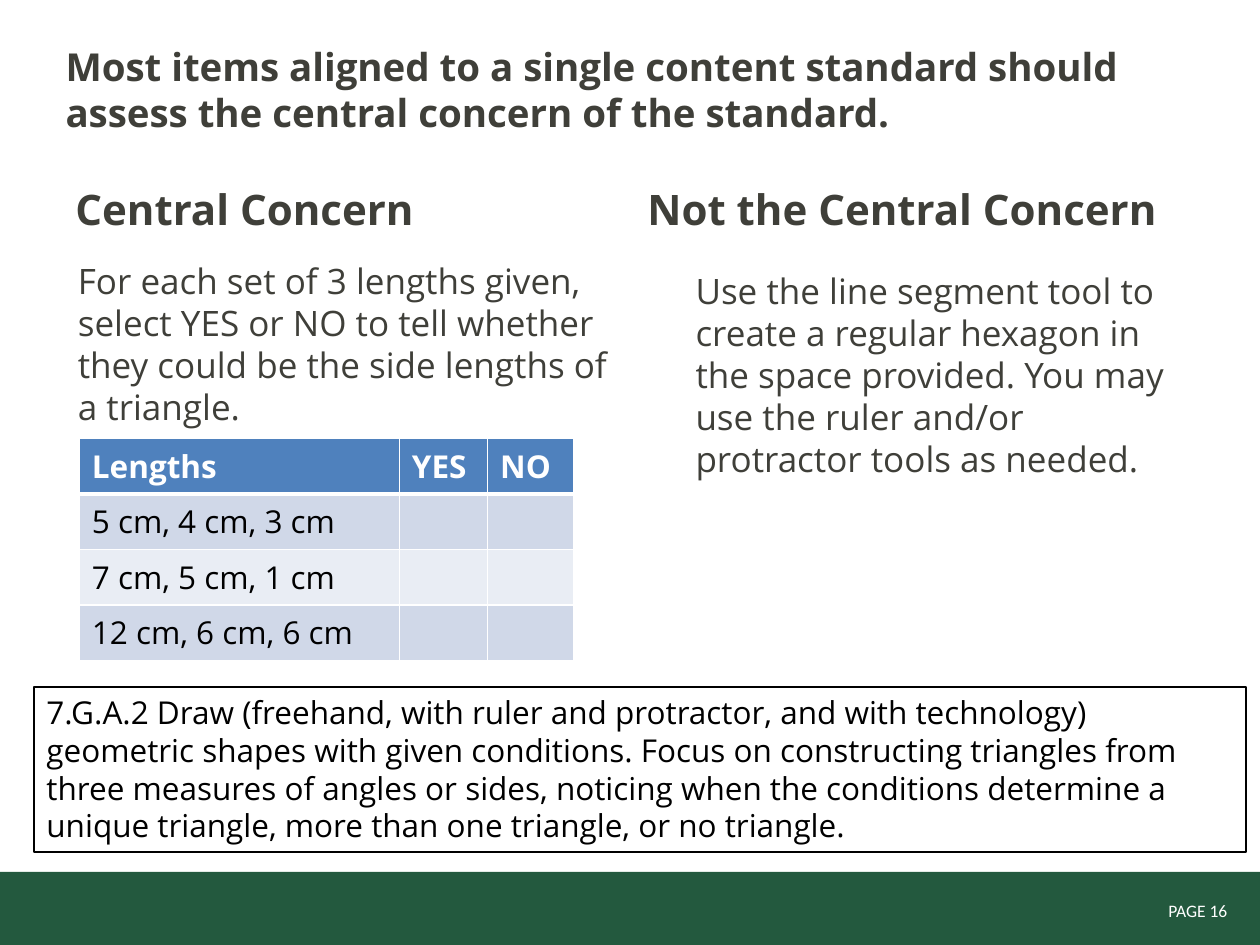
from lxml.etree import SubElement
from pptx import Presentation
from pptx.dml.color import RGBColor
from pptx.enum.shapes import MSO_SHAPE as Preset
from pptx.enum.text import MSO_ANCHOR as Anchor, MSO_AUTO_SIZE as AutoSize, PP_ALIGN as Align
from pptx.oxml.ns import qn
from pptx.util import Inches, Pt

# Content
TITLE = ("Most items aligned to a single content standard should "
         "assess the central concern of the standard.")
LEFT_HEADING = "Central Concern"
LEFT_TASK = ("For each set of 3 lengths given, select YES or NO to tell whether "
             "they could be the side lengths of a triangle.")
RIGHT_HEADING = "Not the Central Concern"
RIGHT_TASK = ("Use the line segment tool to create a regular hexagon in the space "
              "provided. You may use the ruler and/or protractor tools as needed.")
TABLE_ROWS = [
    ("Lengths", "YES", "NO"),
    ("5 cm, 4 cm, 3 cm", "", ""),
    ("7 cm, 5 cm, 1 cm", "", ""),
    ("12 cm, 6 cm, 6 cm", "", ""),
]
STANDARD = ("7.G.A.2 Draw (freehand, with ruler and protractor, and with technology) "
            "geometric shapes with given conditions. Focus on constructing triangles "
            "from three measures of angles or sides, noticing when the conditions "
            "determine a unique triangle, more than one triangle, or no triangle.")
PAGE_LABEL = "PAGE 16"

# Theme: colours, and (font, size, bold, colour) for each text style
COLOURS = {"ink": "3F3F39", "black": "000000", "white": "FFFFFF", "footer": "23593E",
           "header": "4F81BD", "odd": "D0D8E8", "even": "E9EDF4"}
STYLES = {
    "title": ("Open Sans", 22, True, "ink"),
    "heading": ("Open Sans", 24, True, "ink"),
    "body": ("Open Sans", 20, False, "ink"),
    "standard": ("Open Sans", 18, False, "black"),
    "table_header": ("Open Sans", 18, True, "white"),
    "page": ("Calibri", 10, False, "white"),
}

# Layout in inches
COLUMN_WIDTHS = (2.54, 0.7, 0.68)
ROW_HEIGHT = 0.41


def colour(name):
    return RGBColor.from_string(COLOURS[name])


def style_paragraph(paragraph, style, align=Align.LEFT):
    name, size, bold, ink = STYLES[style]
    paragraph.alignment = align
    for key, value in {"name": name, "size": Pt(size), "bold": bold}.items():
        setattr(paragraph.font, key, value)
    paragraph.font.color.rgb = colour(ink)


def write(shape, text, style, margins=(0.1, 0.1, 0.1, 0.1), anchor=Anchor.TOP,
          align=Align.LEFT):
    frame = shape.text_frame
    frame.text = text
    left, top, right, bottom = map(Inches, margins)
    settings = {"word_wrap": True, "auto_size": AutoSize.NONE, "vertical_anchor": anchor,
                "margin_left": left, "margin_top": top,
                "margin_right": right, "margin_bottom": bottom}
    for key, value in settings.items():
        setattr(frame, key, value)
    style_paragraph(frame.paragraphs[0], style, align)


def add_text(slide, box, text, style, **options):
    write(slide.shapes.add_textbox(*map(Inches, box)), text, style, **options)


def add_rectangle(slide, box):
    shape = slide.shapes.add_shape(Preset.RECTANGLE, *map(Inches, box))
    shape.shadow.inherit = False
    return shape


def set_border(cell, side, points):
    properties = cell._tc.get_or_add_tcPr()
    line = SubElement(properties, qn(f"a:ln{side}"), w=str(Pt(points)))
    fill = SubElement(line, qn("a:solidFill"))
    SubElement(fill, qn("a:srgbClr"), val=COLOURS["white"])


def add_lengths_table(slide, left, top):
    size = (sum(COLUMN_WIDTHS), ROW_HEIGHT * len(TABLE_ROWS))
    table = slide.shapes.add_table(len(TABLE_ROWS), len(COLUMN_WIDTHS),
                                   *map(Inches, (left, top, *size))).table
    for column, width in zip(table.columns, COLUMN_WIDTHS):
        column.width = Inches(width)
    for r, values in enumerate(TABLE_ROWS):
        table.rows[r].height = Inches(ROW_HEIGHT)
        fill = "header" if r == 0 else "odd" if r % 2 else "even"
        for c, value in enumerate(values):
            cell = table.cell(r, c)
            cell.text = value
            style_paragraph(cell.text_frame.paragraphs[0],
                            "standard" if r else "table_header")
            for side in "LRTB":
                header_rule = (r, side) in ((0, "B"), (1, "T"))
                set_border(cell, side, 3 if header_rule else 1)
            cell.fill.solid()
            cell.fill.fore_color.rgb = colour(fill)


def main():
    presentation = Presentation()
    presentation.slide_width, presentation.slide_height = Inches(10), Inches(7.5)
    slide = presentation.slides.add_slide(presentation.slide_layouts[5])

    # Footer band and page label
    footer = add_rectangle(slide, (0, 6.92, 10.01, 0.59))
    footer.fill.solid()
    footer.fill.fore_color.rgb = colour("footer")
    footer.line.fill.background()
    add_text(slide, (8.28, 7.09, 1.59, 0.27), PAGE_LABEL, "page",
             margins=(0.1, 0.05, 0.13, 0.05), align=Align.RIGHT)

    # Title
    title = slide.shapes.title
    title.left, title.top, title.width, title.height = map(Inches, (0.42, 0.16, 9, 1.1))
    write(title, TITLE, "title", anchor=Anchor.MIDDLE)

    # Two columns: heading above task
    for left, heading in ((0.5, LEFT_HEADING), (5.04, RIGHT_HEADING)):
        add_text(slide, (left, 1.26, 4.42, 0.7), heading, "heading", anchor=Anchor.BOTTOM)
    add_text(slide, (0.52, 1.96, 4.4, 3.62), LEFT_TASK, "body")
    add_text(slide, (5.04, 1.99, 4.42, 2.97), RIGHT_TASK, "body",
             margins=(0.48, 0.15, 0.1, 0.1))
    add_lengths_table(slide, 0.63, 3.48)

    # Text of the standard
    standard = add_rectangle(slide, (0.27, 5.45, 9.62, 1.31))
    standard.fill.background()
    standard.line.color.rgb = colour("black")
    standard.line.width = Pt(1)
    write(standard, STANDARD, "standard", margins=(0.1, 0.05, 0.1, 0.05))

    presentation.save("out.pptx")


if __name__ == "__main__":
    main()
